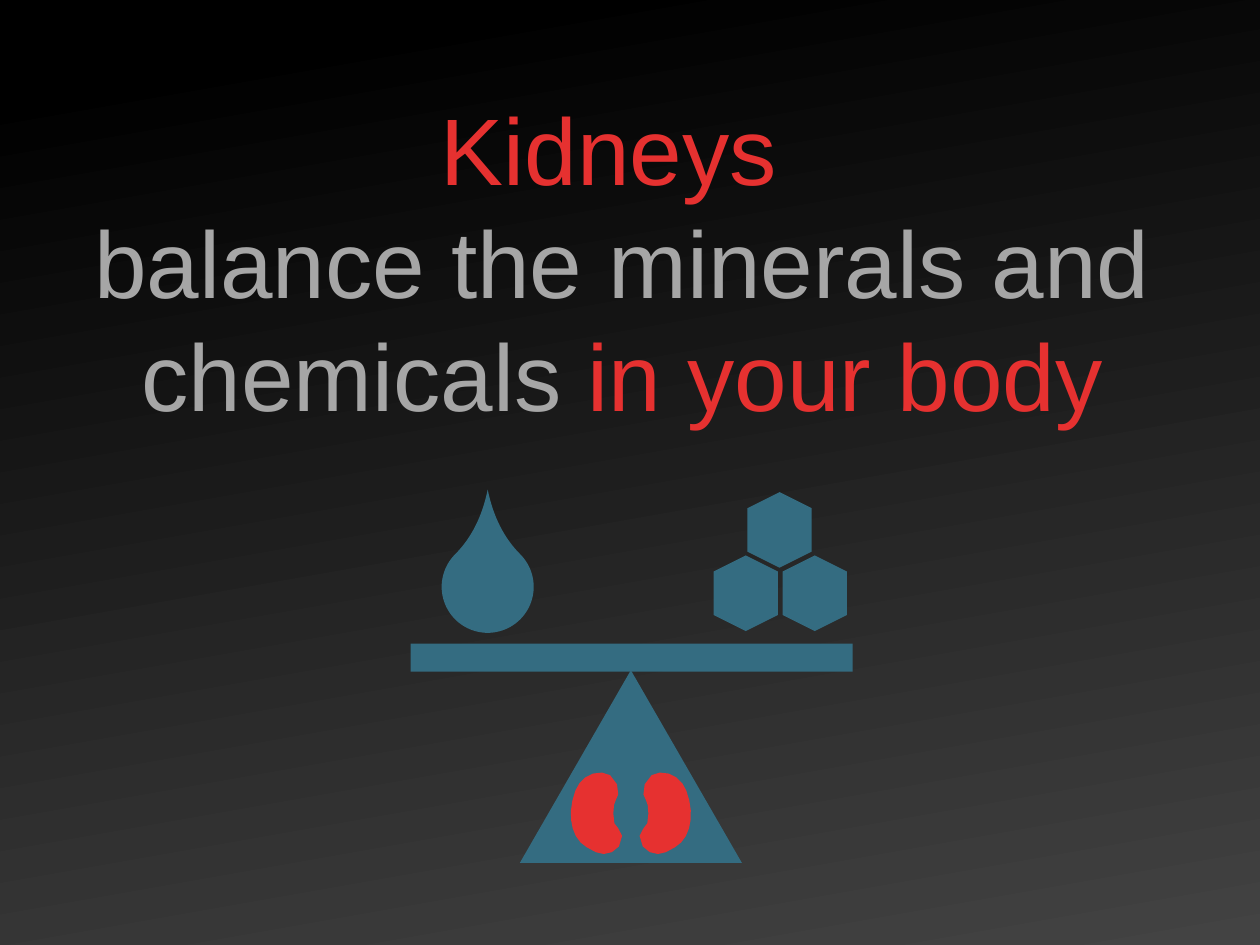
import math
from dataclasses import dataclass

import pptx
import pptx.dml.color
import pptx.enum.shapes
import pptx.enum.text
import pptx.util

Pt = pptx.util.Pt
SHAPE = pptx.enum.shapes.MSO_SHAPE


@dataclass(frozen=True)
class Theme:
    font: str = "Arial"
    title_size: int = 54
    red: str = "E63130"
    grey: str = "A6A6A6"
    teal: str = "346C81"
    dark: str = "000000"
    light: str = "434343"


THEME = Theme()
AXIS = 360.5  # vertical centre line of the scale

# Kidney outline as Bezier segments: distance from AXIS, distance from kidney top
KIDNEY_START = (10, 24)
KIDNEY_CURVES = [
    ((10, 20), (9.5, 17.5), (8.5, 16)),
    ((8, 15), (7.5, 14), (7.2, 13)),
    ((6.5, 11), (7, 8.5), (7.9, 7.2)),
    ((10, 2), (13.5, 0.7), (16.5, 0.5)),
    ((23.8, 0), (29.5, 5), (31.7, 10.8)),
    ((36.7, 23.8), (34.5, 38), (25.2, 43.2)),
    ((19.4, 46.8), (15.8, 48.2), (10.8, 46)),
    ((8.6, 45.4), (4.3, 41), (5, 36.7)),
    ((5.8, 34.5), (6.5, 33.8), (7.2, 32.4)),
    ((7.9, 31.7), (8.6, 30.2), (9.4, 29.5)),
    ((10, 28.8), (10, 28), KIDNEY_START),
]


def rgb(color):
    return pptx.dml.color.RGBColor.from_string(color)


def paint(sp, color):
    sp.shadow.inherit = False
    sp.fill.solid()
    sp.fill.fore_color.rgb = rgb(color)
    sp.line.fill.background()


def add_run(p, text, *, color, size=THEME.title_size):
    r = p.add_run()
    r.text = text
    r.font.name = THEME.font
    r.font.size = Pt(size)
    r.font.bold = False
    r.font.color.rgb = rgb(color)


def add_shape(s, kind, x, y, w, h, rotation=0):
    sp = s.shapes.add_shape(kind, Pt(x), Pt(y), Pt(w), Pt(h))
    sp.rotation = rotation
    paint(sp, THEME.teal)
    return sp


def bezier(p0, p1, p2, p3, spacing=5):
    """Points along a cubic curve, without its first point."""
    steps = max(1, round(math.dist(p0, p3) / spacing))
    for i in range(1, steps + 1):
        t = i / steps
        u = 1 - t
        yield tuple(u**3 * a + 3 * u * u * t * b + 3 * u * t * t * c + t**3 * d
                    for a, b, c, d in zip(p0, p1, p2, p3))


def add_kidney(s, side, top=441):
    """Draw a kidney left (side -1) or right (side 1) of the axis."""
    outline = [KIDNEY_START]
    for curve in KIDNEY_CURVES:
        outline.extend(bezier(outline[-1], *curve))
    pts = [(Pt(AXIS + side * dx), Pt(top + dy)) for dx, dy in outline]
    fb = s.shapes.build_freeform(*pts[0])
    fb.add_line_segments(pts[1:-1], close=True)
    paint(fb.convert_to_shape(), THEME.red)


def set_background(s):
    fill = s.background.fill
    fill.gradient()
    fill.gradient_angle = 280
    stops = ((0.08, THEME.dark), (1, THEME.light))
    for stop, (position, color) in zip(fill.gradient_stops, stops):
        stop.position = position
        stop.color.rgb = rgb(color)


def set_title(s):
    sp = s.shapes.title
    sp.left, sp.top, sp.width, sp.height = Pt(25.7), Pt(47), Pt(659.5), Pt(204)
    tf = sp.text_frame
    tf.word_wrap = True
    tf.auto_size = pptx.enum.text.MSO_AUTO_SIZE.NONE
    tf.vertical_anchor = pptx.enum.text.MSO_ANCHOR.MIDDLE
    p = tf.paragraphs[0]
    p.alignment = pptx.enum.text.PP_ALIGN.CENTER
    p.line_spacing = 1.0
    p.space_before = Pt(0)
    add_run(p, "Kidneys ", color=THEME.red)
    p.add_line_break()
    add_run(p, "balance the minerals and chemicals ", color=THEME.grey)
    add_run(p, "in your body", color=THEME.red)


def add_scale(s):
    add_shape(s, SHAPE.ISOSCELES_TRIANGLE, AXIS - 63.4, 383, 126.8, 110)
    add_shape(s, SHAPE.RECTANGLE, 234.6, 367.8, 252.6, 16)
    for side in (-1, 1):
        add_kidney(s, side)


def add_drop(s):
    drop = add_shape(s, SHAPE.TEAR, 252.4, 309, 52.6, 52.6, 315)
    drop.adjustments[0] = 1.493


def add_hexagons(s, cx=445.8, cy=302.8, w=43.2, h=36.8):
    """Stack one hexagon on two, each standing on a point."""
    for dx, dy in ((-19.6, 36.2), (-0.3, 0), (19.8, 36.2)):
        add_shape(s, SHAPE.HEXAGON, cx + dx - w / 2, cy + dy - h / 2, w, h, 270)


def main():
    prs = pptx.Presentation()
    prs.slide_width, prs.slide_height = Pt(720), Pt(540)
    s = prs.slides.add_slide(prs.slide_layouts[5])
    set_background(s)
    set_title(s)
    add_scale(s)
    add_drop(s)
    add_hexagons(s)
    prs.save("out.pptx")


if __name__ == "__main__":
    main()
